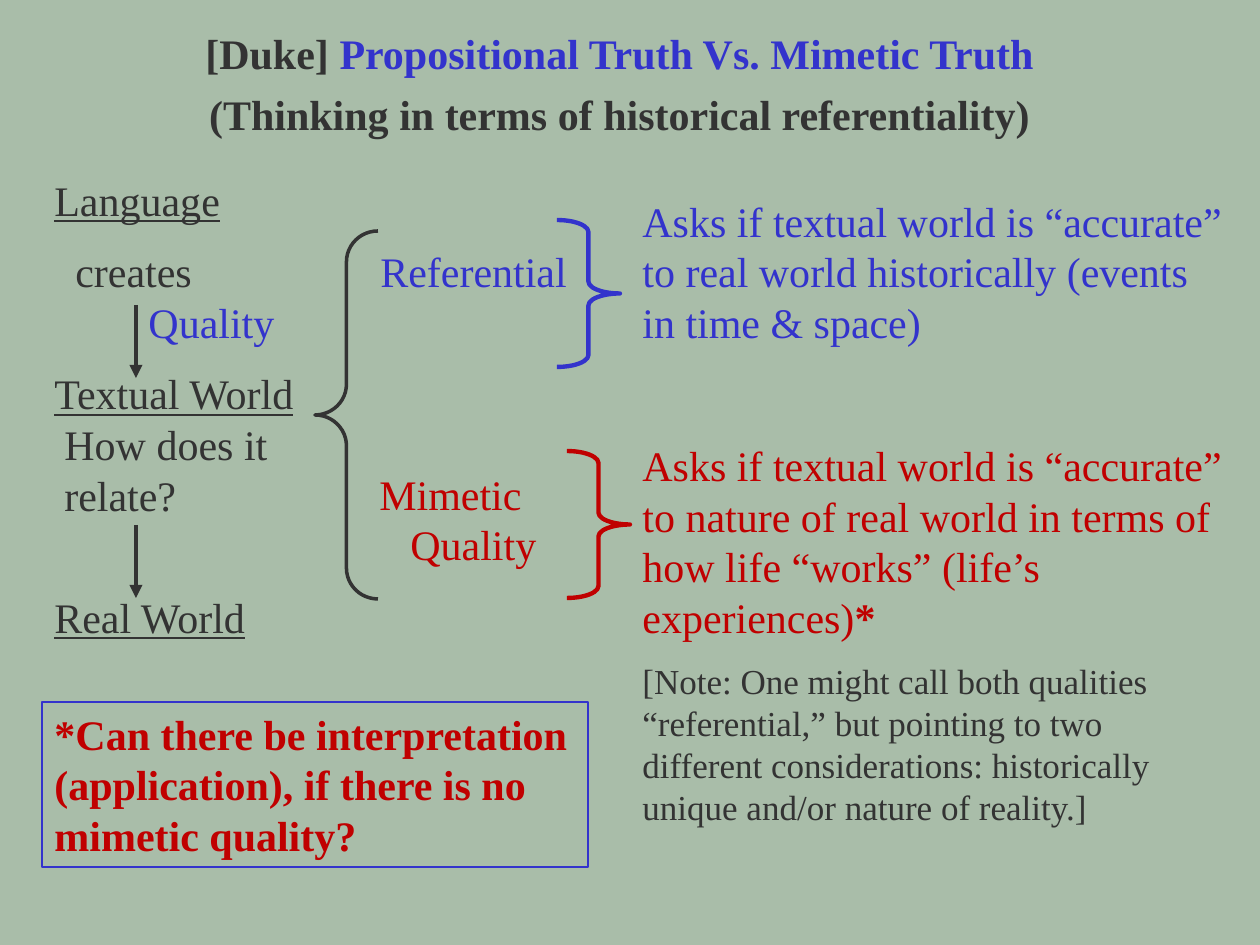
from lxml.etree import SubElement
from pptx import Presentation
from pptx.dml.color import RGBColor
from pptx.enum.shapes import MSO_CONNECTOR, MSO_SHAPE
from pptx.enum.text import MSO_ANCHOR, PP_ALIGN
from pptx.oxml.ns import qn
from pptx.util import Pt

SCALE = 914400 / 126
FONT = "Times New Roman"
GREEN = RGBColor(0xA9, 0xBD, 0xA9)
DARK = RGBColor(0x33, 0x33, 0x33)
BLUE = RGBColor(0x33, 0x33, 0xCC)
RED = RGBColor(0xC0, 0x00, 0x00)
LEAD = 28.9
GAP = 12
SKIP = LEAD + GAP


def px(size):
    return round(size * SCALE)


def add_box(slide, left, top, width, height):
    box = slide.shapes.add_textbox(px(left), px(top), px(width), px(height))
    box.text_frame.word_wrap = True
    return box.text_frame


def add_para(frame, text, color, size=24, before=0, indent=0,
             bold=False, under=False, align=PP_ALIGN.LEFT):
    para = frame.paragraphs[0]
    if para.runs:
        para = frame.add_paragraph()
    para.text = text
    para.alignment = align
    para.space_before = Pt(before)
    para.line_spacing = Pt(LEAD * size / 24)
    if indent:
        para._p.get_or_add_pPr().set("marL", str(px(indent)))
    style_run(para.runs[0], color, size, bold, under)
    return para


def style_run(run, color, size=24, bold=False, under=False):
    font = run.font
    font.name = FONT
    font.size = Pt(size)
    font.bold = bold
    font.underline = under
    font.color.rgb = color


def add_run(para, text, color, bold):
    run = para.add_run()
    run.text = text
    style_run(run, color, bold=bold)


def add_shape(slide, kind, left, top, width, height, color, weight):
    shape = slide.shapes.add_shape(
        kind, px(left), px(top), px(width), px(height))
    shape.shadow.inherit = False
    shape.fill.background()
    shape.line.color.rgb = color
    shape.line.width = Pt(weight)
    return shape


def add_brace(slide, kind, left, top, height, color, weight, curve):
    brace = add_shape(slide, kind, left, top, 63, height, color, weight)
    brace.adjustments[0] = curve
    brace.adjustments[1] = 0.5


def add_arrow(slide, left, top, height):
    arrow = slide.shapes.add_connector(
        MSO_CONNECTOR.STRAIGHT, px(left), px(top), px(left), px(top + height))
    arrow.line.color.rgb = DARK
    arrow.line.width = Pt(2.5)
    SubElement(arrow.line._get_or_add_ln(), qn("a:tailEnd"), type="triangle")
    SubElement(arrow._element.spPr, qn("a:effectLst"))


def add_title(slide):
    frame = add_box(slide, 42, 21, 1155, 125)
    head = add_para(frame, "[Duke] ", DARK, bold=True, align=PP_ALIGN.CENTER)
    add_run(head, "Propositional Truth Vs. Mimetic Truth", BLUE, True)
    add_para(frame, "(Thinking in terms of historical referentiality)", DARK,
             before=6, bold=True, align=PP_ALIGN.CENTER)


def add_chain(slide):
    frame = add_box(slide, 42, 168, 290, 480)
    add_para(frame, "Language", DARK, under=True)
    add_para(frame, "creates", DARK, before=GAP, indent=21)
    add_para(frame, "Textual World", DARK, before=SKIP, under=True)
    add_para(frame, "How does it", DARK, indent=10)
    add_para(frame, "relate?", DARK, indent=10)
    add_para(frame, "Real World", DARK, before=SKIP, under=True)
    for top in (305, 525):
        add_arrow(slide, 136, top, 73)


def add_kinds(slide):
    add_para(add_box(slide, 368, 239, 220, 63), "Referential", BLUE)
    add_para(add_box(slide, 136, 290, 160, 63), "Quality", BLUE)
    frame = add_box(slide, 367, 462, 200, 114)
    add_para(frame, "Mimetic", RED)
    add_para(frame, "Quality", RED, indent=31)
    add_brace(slide, MSO_SHAPE.LEFT_BRACE, 315, 231, 368, DARK, 2, 0.49)
    for left, top, color in ((557, 220, BLUE), (567, 451, RED)):
        add_brace(slide, MSO_SHAPE.RIGHT_BRACE, left, top, 147,
                  color, 2.5, 0.19)


def add_tests(slide):
    frame = add_box(slide, 630, 189, 609, 661)
    add_para(frame, "Asks if textual world is “accurate” to real world "
             "historically (events in time & space)", BLUE)
    life = add_para(frame, "Asks if textual world is “accurate” to nature of "
                    "real world in terms of how life “works” (life’s "
                    "experiences)", RED, before=SKIP + GAP)
    add_run(life, "*", RED, True)
    add_para(frame, "[Note: One might call both qualities “referential,” but "
             "pointing to two different considerations: historically unique "
             "and/or nature of reality.]", DARK, size=20, before=10)


def add_query(slide):
    shape = add_shape(slide, MSO_SHAPE.RECTANGLE, 42, 702, 546, 165, BLUE, 1.5)
    frame = shape.text_frame
    frame.word_wrap = True
    frame.vertical_anchor = MSO_ANCHOR.TOP
    add_para(frame, "*Can there be interpretation (application), if there is "
             "no mimetic quality?", RED, bold=True)


def main():
    deck = Presentation()
    deck.slide_width = px(1260)
    deck.slide_height = px(945)
    slide = deck.slides.add_slide(deck.slide_layouts[6])
    slide.background.fill.solid()
    slide.background.fill.fore_color.rgb = GREEN
    add_title(slide)
    add_chain(slide)
    add_kinds(slide)
    add_tests(slide)
    add_query(slide)
    deck.save("out.pptx")


if __name__ == "__main__":
    main()
